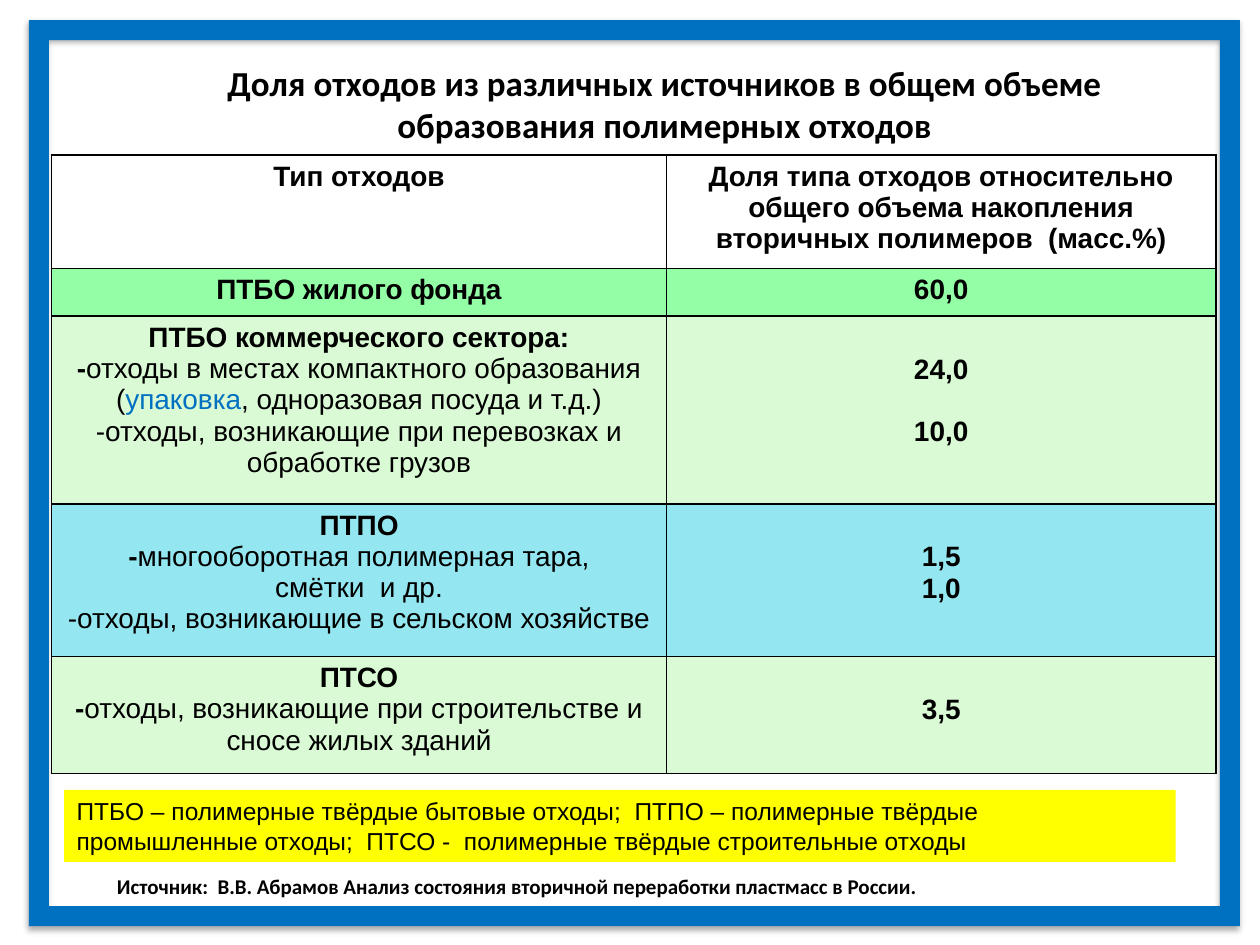
from lxml.etree import SubElement
from pptx import Presentation
from pptx.dml.color import RGBColor
from pptx.enum.shapes import MSO_SHAPE as Shape
from pptx.enum.text import PP_ALIGN as Align
from pptx.oxml import parse_xml
from pptx.oxml.ns import nsdecls, qn
from pptx.util import Inches, Pt

COLORS = {
    "black": "000000",
    "blue": "0070C0",
    "green": "94FEA6",
    "pale_green": "D9FAD4",
    "cyan": "94E7F0",
    "yellow": "FFFF00",
}
COLUMN_WIDTHS = [4.88, 4.36]
ROWS = [
    (0.87, None,
     [[("Тип отходов", True)]],
     ["Доля типа отходов относительно общего объема накопления "
      "вторичных полимеров  (масс.%)"], 0.05, 0),
    (0.38, "green", [[("ПТБО жилого фонда", True)]], ["60,0"], 0.05, 0),
    (1.49, "pale_green",
     [[("ПТБО коммерческого сектора:", True)],
      [("-", True), ("отходы в местах компактного образования (", False),
       ("упаковка", False, "blue"), (", одноразовая посуда и т.д.)", False)],
      [("-отходы, возникающие при перевозках и обработке грузов", False)]],
     ["24,0", "10,0"], 0.3, 18),
    (1.21, "cyan",
     [[("ПТПО", True)],
      [("-", True), ("многооборотная полимерная тара,", False)],
      [("смётки  и др.", False)],
      [("-отходы, возникающие в сельском хозяйстве", False)]],
     ["1,5", "1,0"], 0.3, 0),
    (0.93, "pale_green",
     [[("ПТСО", True)],
      [("-", True),
       ("отходы, возникающие при строительстве и сносе жилых зданий", False)]],
     ["3,5"], 0.3, 0),
]


def rgb(name):
    return RGBColor.from_string(COLORS[name])


def style_span(span, font, size, bold=False, color="black"):
    span.font.name = font
    span.font.size = Pt(size)
    span.font.bold = bold
    span.font.color.rgb = rgb(color)


def add_frame(page, box):
    frame = page.shapes.add_shape(Shape.FRAME, *map(Inches, box))
    frame.adjustments[0] = 0.022
    frame.fill.solid()
    frame.fill.fore_color.rgb = rgb("blue")
    frame.line.fill.background()
    frame.shadow.inherit = False
    effects = frame._element.spPr.find(qn("a:effectLst"))
    shadow = SubElement(effects, qn("a:outerShdw"), blurRad=str(Pt(3.5)),
                        dist=str(Pt(2.2)), dir="5400000", rotWithShape="0")
    shade = SubElement(shadow, qn("a:srgbClr"), val=COLORS["black"])
    SubElement(shade, qn("a:alpha"), val="32000")


def add_text(page, box, text, font, size, bold=False, align=Align.LEFT, fill=None):
    label = page.shapes.add_textbox(*map(Inches, box))
    label.text_frame.word_wrap = True
    if fill:
        label.fill.solid()
        label.fill.fore_color.rgb = rgb(fill)
    para = label.text_frame.paragraphs[0]
    para.text = text
    para.alignment = align
    style_span(para.runs[0], font, size, bold)


def style_cell(cell, fill):
    if fill:
        cell.fill.solid()
        cell.fill.fore_color.rgb = rgb(fill)
    else:
        cell.fill.background()
    properties = cell._tc.get_or_add_tcPr()
    for place, side in enumerate(("lnL", "lnR", "lnT", "lnB")):
        properties.insert(place, parse_xml(
            f'<a:{side} {nsdecls("a")} w="{Pt(1)}"><a:solidFill>'
            f'<a:srgbClr val="{COLORS["black"]}"/></a:solidFill></a:{side}>'))


def fill_cell(cell, paragraphs, top=0.05, gap=0):
    cell.margin_top = Inches(top)
    frame = cell.text_frame
    for index, spans in enumerate(paragraphs):
        para = frame.add_paragraph() if index else frame.paragraphs[0]
        para.alignment = Align.CENTER
        if index and gap:
            para.space_before = Pt(gap)
        for text, *look in spans:
            span = para.add_run()
            span.text = text
            style_span(span, "Arial", 16, *look)


def add_waste_table(page, box):
    table = page.shapes.add_table(
        len(ROWS), len(COLUMN_WIDTHS), *map(Inches, box)).table
    table.first_row = False
    table.horz_banding = False
    for column, width in zip(table.columns, COLUMN_WIDTHS):
        column.width = Inches(width)
    for row, (height, fill, types, shares, top, gap) in zip(table.rows, ROWS):
        row.height = Inches(height)
        type_cell, share_cell = row.cells
        for cell in (type_cell, share_cell):
            style_cell(cell, fill)
        fill_cell(type_cell, types)
        fill_cell(share_cell, [[(share, True)] for share in shares], top, gap)


def main():
    deck = Presentation()
    deck.slide_width = Inches(10)
    deck.slide_height = Inches(7.5)
    page = deck.slides.add_slide(deck.slide_layouts[6])
    add_frame(page, (0.23, 0.16, 9.61, 7.19))
    add_text(page, (1.14, 0.44, 8.27, 0.77),
             "Доля отходов из различных источников в общем объеме "
             "образования полимерных отходов",
             "Calibri", 20, True, Align.CENTER)
    add_waste_table(page, (0.41, 1.23, 9.24, 4.88))
    add_text(page, (0.51, 6.27, 8.82, 0.57),
             "ПТБО – полимерные твёрдые бытовые отходы;  ПТПО – полимерные "
             "твёрдые промышленные отходы;  ПТСО -  полимерные твёрдые "
             "строительные отходы",
             "Arial", 14, fill="yellow")
    add_text(page, (0.83, 6.88, 8.9, 0.3),
             "Источник:  В.В. Абрамов Анализ состояния вторичной "
             "переработки пластмасс в России.", "Calibri", 12, True)
    deck.save("out.pptx")


if __name__ == "__main__":
    main()
